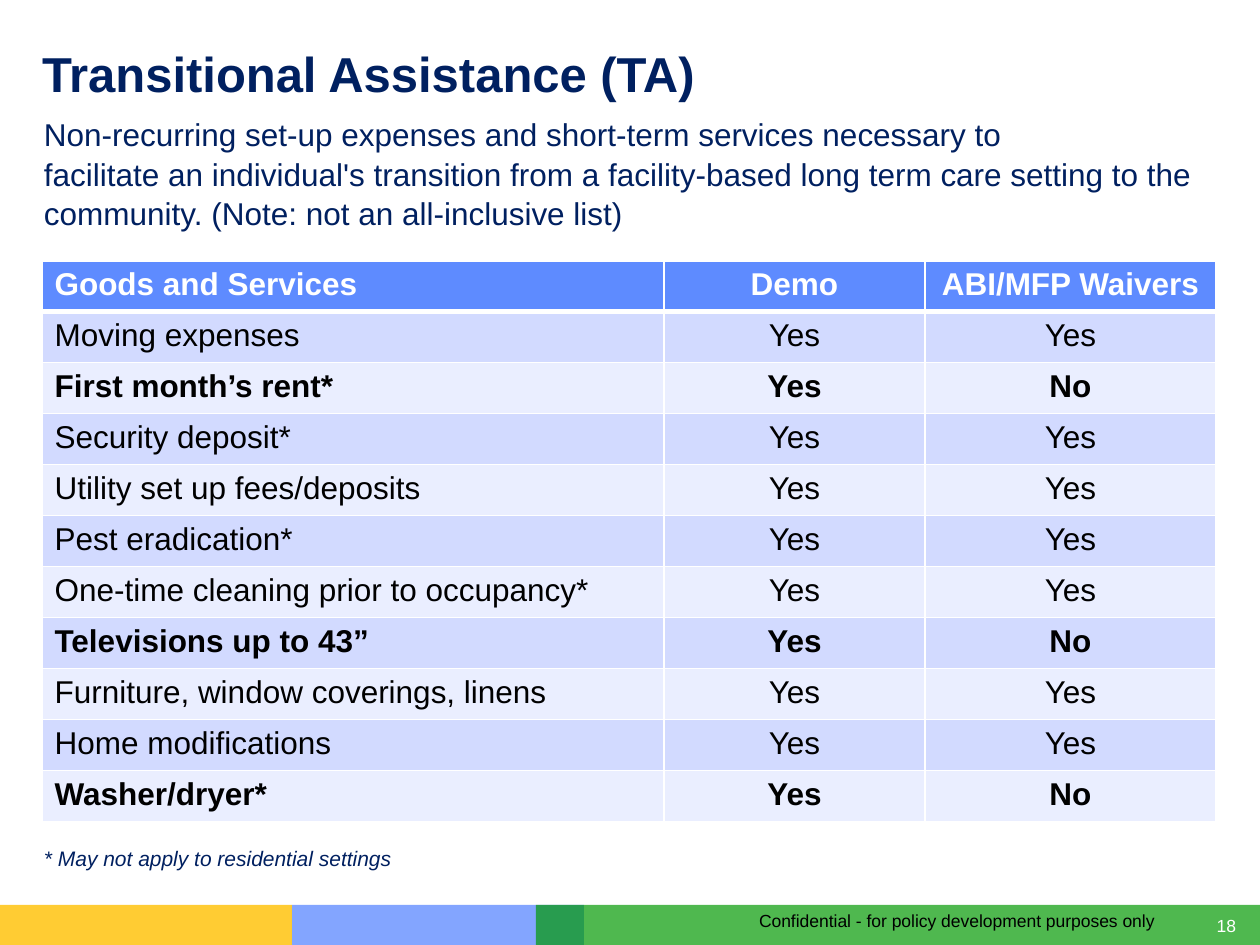
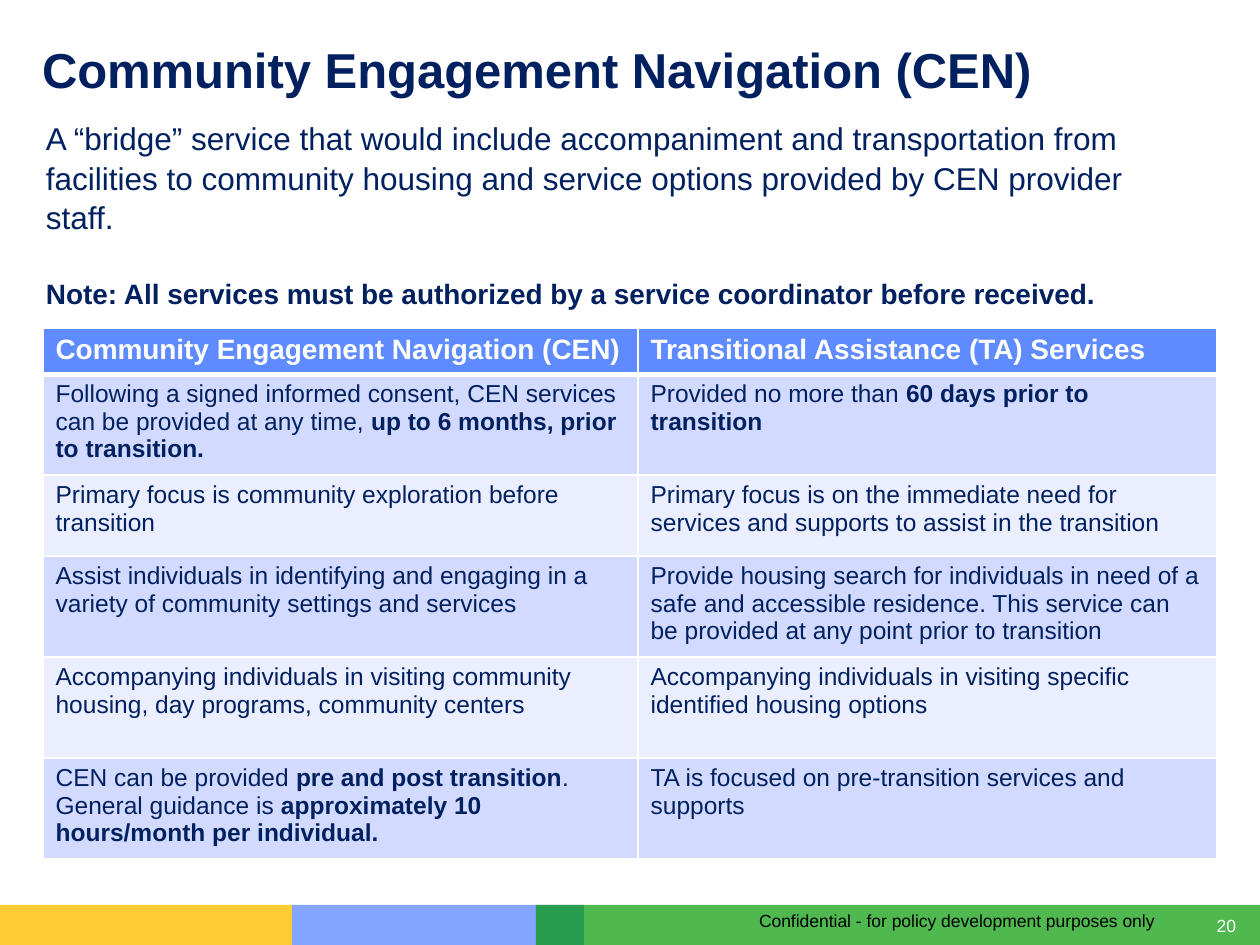
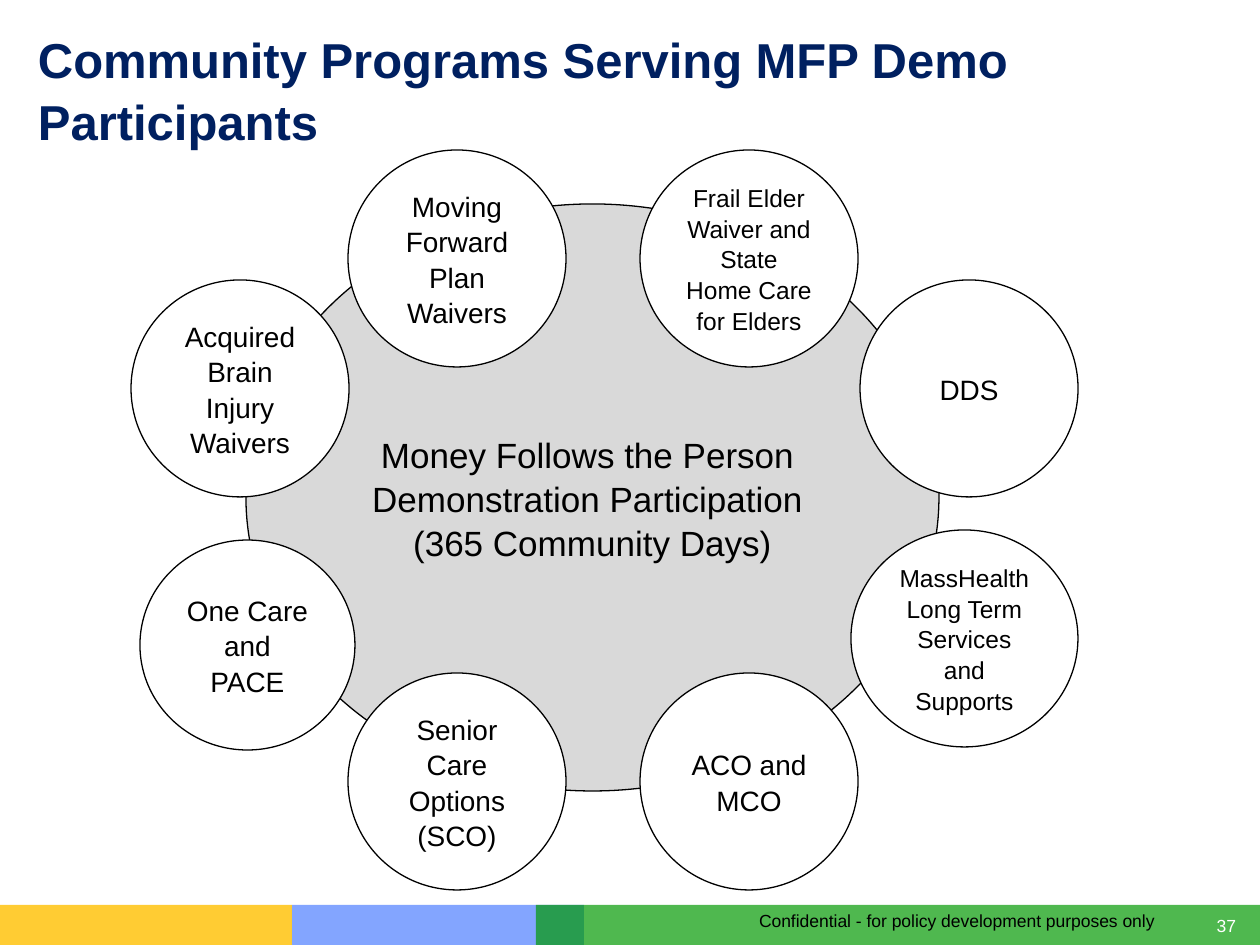
from lxml.etree import SubElement
from pptx import Presentation
from pptx.dml.color import RGBColor
from pptx.enum.shapes import MSO_SHAPE
from pptx.enum.text import MSO_ANCHOR, PP_ALIGN
from pptx.oxml.ns import qn
from pptx.util import Emu, Pt

EMU_PER_PX = 914400 / 126
SLIDE_WIDTH, SLIDE_HEIGHT = 1260, 945
NAVY, BLACK, WHITE = "002060", "000000", "FFFFFF"
HEADER_BLUE, BAND_DARK, BAND_LIGHT = "5E8BFF", "D2DAFF", "EAEEFF"
CENTRE_GREY = "D9D9D9"
FOOTER_TOP = 905
FOOTER_BANDS = [
    (292, 292, HEADER_BLUE, 77),
    (0, 292, "FFC000", 80),
    (536, 724, "009900", 69),
]
FOOTER_NOTE = "Confidential - for policy development purposes only"
INSET = 12, 6

GOODS = [
    ("Goods and Services", "Demo", "ABI/MFP Waivers"),
    ("Moving expenses", "Yes", "Yes"),
    ("First month’s rent*", "Yes", "No"),
    ("Security deposit*", "Yes", "Yes"),
    ("Utility set up fees/deposits", "Yes", "Yes"),
    ("Pest eradication*", "Yes", "Yes"),
    ("One-time cleaning prior to occupancy*", "Yes", "Yes"),
    ("Televisions up to 43”", "Yes", "No"),
    ("Furniture, window coverings, linens", "Yes", "Yes"),
    ("Home modifications", "Yes", "Yes"),
    ("Washer/dryer*", "Yes", "No"),
]
COMPARISON = [
    ("Community Engagement Navigation (CEN)", "Transitional Assistance (TA) Services"),
    ("Following a signed informed consent, CEN services can be provided at any time, "
     "|up to 6 months, prior to transition.",
     "Provided no more than |60 days prior to transition"),
    ("Primary focus is community exploration before transition",
     "Primary focus is on the immediate need for services and supports "
     "to assist in the transition"),
    ("Assist individuals in identifying and engaging in a variety of community "
     "settings and services",
     "Provide housing search for individuals in need of a safe and accessible residence. "
     "This service can be provided at any point prior to transition"),
    ("Accompanying individuals in visiting community housing, day programs, "
     "community centers",
     "Accompanying individuals in visiting specific identified housing options"),
    ("CEN can be provided |pre and post transition|. General guidance is "
     "|approximately 10 hours/month per individual.",
     "TA is focused on pre-transition services and supports"),
]
PROGRAMS = [
    (140, 540, 215, 210, 16, ["One Care ", "and PACE"]),
    (348, 673, 218, 217, 16, ["Senior Care Options (SCO)"]),
    (640, 673, 218, 217, 16, ["ACO and", "MCO"]),
    (131, 280, 218, 217, 16, ["Acquired Brain Injury Waivers"]),
    (348, 150, 218, 217, 16, ["Moving Forward Plan Waivers"]),
    (640, 150, 218, 217, 14, ["Frail Elder Waiver and State Home Care for Elders"]),
    (860, 280, 218, 217, 16, ["DDS"]),
    (851, 530, 227, 217, 14, ["MassHealth Long Term Services and Supports"]),
]


def emu(*lengths):
    return [Emu(round(length * EMU_PER_PX)) for length in lengths]


def rgb(code):
    return RGBColor.from_string(code)


class Deck:
    """Holds the deck's style and the slide being filled."""

    font = "Arial"
    line_spacing = 1.05

    def __init__(self):
        self.presentation = Presentation()
        size = emu(SLIDE_WIDTH, SLIDE_HEIGHT)
        self.presentation.slide_width, self.presentation.slide_height = size

    def start_slide(self, title, number, title_box):
        layout = self.presentation.slide_layouts[6]
        self.shapes = self.presentation.slides.add_slide(layout).shapes
        for left, width, color, opacity in FOOTER_BANDS:
            self.band(left, width, color, opacity)
        self.text((1213, 914, 23, 21), [str(number)], 10, WHITE,
                  align=PP_ALIGN.RIGHT, anchor=MSO_ANCHOR.MIDDLE, inset=(0, 0))
        self.text((747, 903, 500, 34), [FOOTER_NOTE], 10, BLACK)
        self.text(title_box, [title], 28, NAVY, bold=True,
                  anchor=MSO_ANCHOR.BOTTOM, inset=(0, 0))

    def band(self, left, width, color, opacity):
        box = emu(left, FOOTER_TOP, width, SLIDE_HEIGHT - FOOTER_TOP)
        band = self.shapes.add_shape(MSO_SHAPE.RECTANGLE, *box)
        band.shadow.inherit = False
        band.fill.solid()
        band.fill.fore_color.rgb = rgb(color)
        band.line.fill.background()
        tint = band._element.spPr.find(qn("a:solidFill"))[0]
        SubElement(tint, qn("a:alpha"), val=str(opacity * 1000))

    def paragraphs(self, frame, lines, size, color, bold=False, italic=False,
                   align=PP_ALIGN.LEFT, spacing=line_spacing):
        for index, line in enumerate(lines):
            paragraph = frame.add_paragraph() if index else frame.paragraphs[0]
            paragraph.alignment = align
            paragraph.line_spacing = spacing
            font = paragraph.font
            font.name, font.size, font.italic = self.font, Pt(size), italic
            font.color.rgb = rgb(color)
            parts = line.split("|")
            if len(parts) == 1:
                font.bold = bold
            for position, part in enumerate(parts):
                run = paragraph.add_run()
                run.text = part
                if len(parts) > 1:
                    run.font.bold = position % 2 == 1

    def text(self, box, lines, size, color, anchor=MSO_ANCHOR.TOP, inset=INSET, **style):
        frame = self.shapes.add_textbox(*emu(*box)).text_frame
        frame.word_wrap = True
        frame.vertical_anchor = anchor
        frame.margin_left = frame.margin_right = emu(inset[0])[0]
        frame.margin_top = frame.margin_bottom = emu(inset[1])[0]
        self.paragraphs(frame, lines, size, color, **style)
        return frame

    def circle(self, box, lines, size, fill=WHITE, wrap=True):
        circle = self.shapes.add_shape(MSO_SHAPE.OVAL, *emu(*box))
        circle.shadow.inherit = False
        circle.fill.solid()
        circle.fill.fore_color.rgb = rgb(fill)
        circle.line.color.rgb = rgb(BLACK)
        circle.line.width = Pt(0.75)
        frame = circle.text_frame
        frame.word_wrap = wrap
        frame.vertical_anchor = MSO_ANCHOR.MIDDLE
        self.paragraphs(frame, lines, size, BLACK, align=PP_ALIGN.CENTER)

    def table(self, left, top, rows, widths, heights, header_size, body_size,
              body_color, answers=False):
        box = emu(left, top, sum(widths), sum(heights))
        table = self.shapes.add_table(len(rows), len(widths), *box).table
        for column, width in zip(table.columns, emu(*widths)):
            column.width = width
        for row, height in zip(table.rows, emu(*heights)):
            row.height = height
        for r, row in enumerate(rows):
            header = r == 0
            fill = HEADER_BLUE if header else (BAND_LIGHT, BAND_DARK)[r % 2]
            differs = answers and row[1] != row[2]
            for c, content in enumerate(row):
                cell = table.cell(r, c)
                self.borders(cell, top=3 if r == 1 else 1, bottom=3 if header else 1)
                cell.fill.solid()
                cell.fill.fore_color.rgb = rgb(fill)
                self.paragraphs(cell.text_frame, [content],
                                header_size if header else body_size,
                                WHITE if header else body_color,
                                bold=header or differs, spacing=1.0,
                                align=PP_ALIGN.CENTER if answers and c else PP_ALIGN.LEFT)

    def borders(self, cell, top, bottom):
        properties = cell._tc.get_or_add_tcPr()
        for side, points in (("L", 1), ("R", 1), ("T", top), ("B", bottom)):
            edge = SubElement(properties, qn(f"a:ln{side}"), w=str(int(Pt(points))))
            SubElement(SubElement(edge, qn("a:solidFill")), qn("a:srgbClr"), val=WHITE)


def transitional_assistance(deck):
    deck.start_slide("Transitional Assistance (TA)", 18, (42, 43, 1077, 59))
    deck.text((32, 107, 1174, 130), [
        "Non-recurring set-up expenses and short-term services necessary to",
        "facilitate an individual's transition from a facility-based long term care "
        "setting to the community. (Note: not an all-inclusive list)",
    ], 18, NAVY)
    deck.table(42, 261, GOODS, [622, 261, 291], [50] + [51] * 10, 18, 18, BLACK,
               answers=True)
    deck.text((32, 838, 1174, 38), ["* May not apply to residential settings"], 12, NAVY,
              italic=True)


def engagement_navigation(deck):
    deck.start_slide("Community Engagement Navigation (CEN)", 20, (42, 39, 1077, 59))
    summary = deck.text((34, 111, 1174, 200), [
        "A “bridge” service that would include accompaniment and transportation from "
        "facilities to community housing and service options provided by CEN provider staff.",
        "Note: All services must be authorized by a service coordinator before received.",
    ], 18, NAVY)
    note = summary.paragraphs[1]
    note.space_before = Pt(22)
    note.font.size, note.font.bold = Pt(16), True
    deck.table(43, 328, COMPARISON, [595, 579], [46, 101, 81, 101, 101, 101], 16, 14, NAVY)


def community_programs(deck):
    deck.start_slide("Community Programs Serving MFP Demo Participants", 37,
                     (38, 32, 1110, 118))
    deck.circle((246, 204, 693, 587), [
        "Money Follows the Person ",
        "Demonstration Participation ",
        "(365 Community Days)",
    ], 20, CENTRE_GREY, wrap=False)
    for *box, size, lines in PROGRAMS:
        deck.circle(box, lines, size)


def main():
    deck = Deck()
    transitional_assistance(deck)
    engagement_navigation(deck)
    community_programs(deck)
    deck.presentation.save("out.pptx")


if __name__ == "__main__":
    main()
